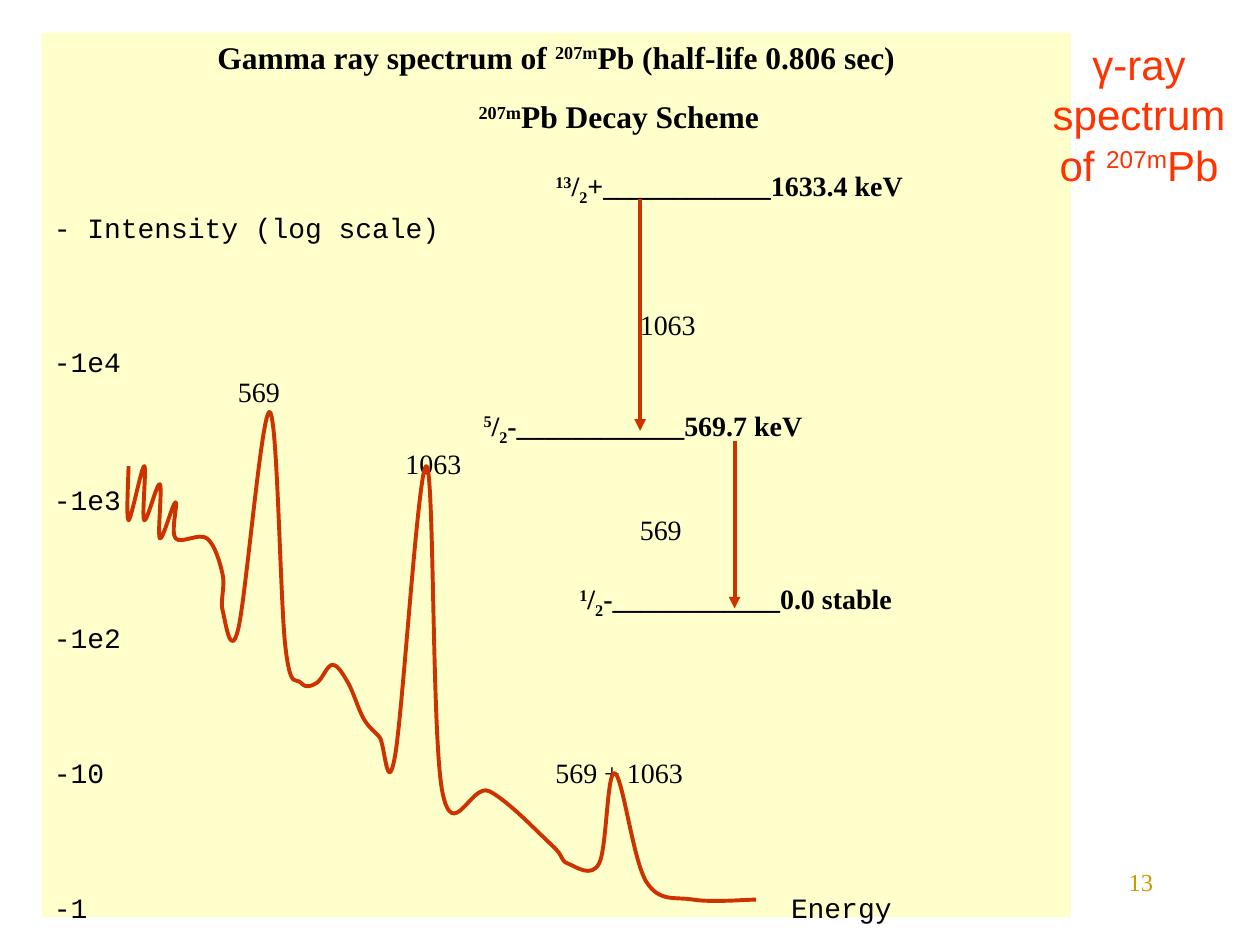
from dataclasses import dataclass

from lxml import etree
from pptx import Presentation, util as u
from pptx.dml.color import RGBColor
from pptx.enum import shapes, text
from pptx.oxml import ns


@dataclass
class Theme:
    panel: str = "FFFFCC"
    ink: str = "000000"
    curve: str = "CC3300"
    title: str = "FF3300"
    number: str = "CC9900"
    serif: str = "Times New Roman"
    mono: str = "Courier New"
    sans: str = "Arial"
    title_size: int = 24
    heading_size: int = 18
    body_size: int = 16
    number_size: int = 14
    line_width: float = 2.25


theme = Theme()
SUPER, SUB = 30000, -25000


def add_runs(paragraph, runs, font, size, color, bold=False):
    """Add (wording, baseline shift) pairs as runs of one style."""
    for wording, shift in runs:
        run = paragraph.add_run()
        run.text = wording
        run.font.name, run.font.size, run.font.bold = font, u.Pt(size), bold
        run.font.color.rgb = RGBColor.from_string(color)
        if shift:
            run.font._element.set("baseline", str(shift))


def style_line(shape):
    """Give a curve or connector the spectrum line and no shadow."""
    shape.line.color.rgb = RGBColor.from_string(theme.curve)
    shape.line.width = u.Pt(theme.line_width)
    properties = shape._element.spPr
    if properties.find(ns.qn("a:effectLst")) is None:
        etree.SubElement(properties, ns.qn("a:effectLst"))


presentation = Presentation()
presentation.slide_width, presentation.slide_height = u.Inches(10), u.Inches(7.5)
slide = presentation.slides.add_slide(presentation.slide_layouts[6])

# Page number
number_box = slide.shapes.add_textbox(u.Inches(7.17), u.Inches(6.83), u.Inches(2.08), u.Inches(0.5))
number_box.text_frame.word_wrap = True
paragraph = number_box.text_frame.paragraphs[0]
paragraph.alignment = text.PP_ALIGN.RIGHT
add_runs(paragraph, [("13", 0)], theme.serif, theme.number_size, theme.number)

# Panel
panel = slide.shapes.add_shape(shapes.MSO_SHAPE.RECTANGLE, u.Inches(0.33), u.Inches(0.26),
                               u.Inches(8.17), u.Inches(7.02))
panel.shadow.inherit = False
panel.fill.solid()
panel.fill.fore_color.rgb = RGBColor.from_string(theme.panel)
panel.line.fill.background()
frame = panel.text_frame
frame.word_wrap = True
frame.vertical_anchor = text.MSO_ANCHOR.TOP

# Panel lines: bottom edge in points, indent in inches, runs
heading, level, label, axis = "heading", "level", "label", "axis"
styles = {
    heading: (theme.serif, theme.heading_size, theme.ink, True),
    level: (theme.serif, theme.body_size, theme.ink, True),
    label: (theme.serif, theme.body_size, theme.ink),
    axis: (theme.mono, theme.body_size, theme.ink),
}
panel_lines = [
    (43, 0, [(heading, [("Gamma ray spectrum of ", 0), ("207m", SUPER), ("Pb (half-life 0.806 sec)", 0)])]),
    (77, 3.37, [(heading, [("207m", SUPER), ("Pb Decay Scheme", 0)])]),
    (118, 3.98, [(level, [("13", SUPER), ("/", 0), ("2", SUB), ("+____________1633.4 keV", 0)])]),
    (139, 0, [(axis, [("- Intensity (log scale)", 0)])]),
    (195, 4.65, [(label, [("1063", 0)])]),
    (216, 0, [(axis, [("-1e4", 0)])]),
    (233, 1.46, [(label, [("569", 0)])]),
    (255, 3.41, [(level, [("5", SUPER), ("/", 0), ("2", SUB), ("-____________569.7 keV", 0)])]),
    (274, 2.79, [(label, [("1063", 0)])]),
    (295, 0, [(axis, [("-1e3", 0)])]),
    (312, 4.65, [(label, [("569", 0)])]),
    (354, 4.17, [(level, [("1", SUPER), ("/", 0), ("2", SUB), ("-____________0.0 stable", 0)])]),
    (374, 0, [(axis, [("-1e2", 0)])]),
    (451, 3.98, [(axis, [("-10\t", 0)]), (label, [("569 + 1063", 0)])]),
    (528, 5.85, [(axis, [("-1\tEnergy", 0)])]),
]
line_height, previous_bottom = 16, None
for bottom, indent, parts in panel_lines:
    first = previous_bottom is None
    paragraph = frame.paragraphs[0] if first else frame.add_paragraph()
    paragraph.alignment = text.PP_ALIGN.CENTER if first else text.PP_ALIGN.LEFT
    paragraph.line_spacing = u.Pt(21 if first else line_height)
    paragraph.space_before = u.Pt(0 if first else bottom - previous_bottom - line_height)
    properties = paragraph._p.get_or_add_pPr()
    if "\t" in paragraph.text or any("\t" in run[0] for part in parts for run in part[1]):
        tabs = etree.SubElement(properties, ns.qn("a:tabLst"))
        etree.SubElement(tabs, ns.qn("a:tab"), pos=str(u.Inches(indent)), algn="l")
    else:
        properties.set("marL", str(u.Inches(indent)))
    for style, runs in parts:
        add_runs(paragraph, runs, *styles[style])
    previous_bottom = bottom

# Spectrum: knots as column and row of a grid, joined by a smooth spline
knots = [(0, 3), (0, 6), (1, 3), (1, 6), (2, 4), (2, 7), (3, 5), (3, 7), (5, 7), (6, 9), (6, 11),
         (7, 12), (9, 0), (10, 13), (11, 15), (12, 15), (13, 14), (14, 15), (15, 17), (16, 18),
         (17, 19), (19, 3), (20, 21), (23, 21), (27, 24), (28, 25), (30, 25), (31, 20), (33, 26),
         (36, 27), (40, 27)]
left, top, column, row = 1.02, 3.27, 4.98 / 40, 3.87 / 27
points = [(u.Inches(left + x * column), u.Inches(top + y * row)) for x, y in knots]
builder = slide.shapes.build_freeform(*points[0])
builder.add_line_segments(points[1:], close=False)
spectrum = builder.convert_to_shape()
spectrum.shadow.inherit = False
spectrum.fill.background()
style_line(spectrum)
local = [(x - spectrum.left, y - spectrum.top) for x, y in points]
padded = [local[0], *local, local[-1]]
outline = next(spectrum._element.iter(ns.qn("a:path")))
for index, segment in enumerate(outline.findall(ns.qn("a:lnTo"))):
    before, start, end, after = (padded + [local[-1]])[index:index + 4]
    curve = etree.Element(ns.qn("a:cubicBezTo"))
    controls = [[s + (e - b) / 6 for b, s, e in zip(before, start, end)],
                [e - (a - s) / 6 for s, e, a in zip(start, end, after)], end]
    for x, y in controls:
        etree.SubElement(curve, ns.qn("a:pt"), x=str(round(x)), y=str(round(y)))
    outline.replace(segment, curve)

# Decay arrows
for x, start, end in [(5.08, 1.58, 3.42), (5.83, 3.5, 4.83)]:
    arrow = slide.shapes.add_connector(shapes.MSO_CONNECTOR.STRAIGHT, u.Inches(x), u.Inches(start),
                                       u.Inches(x), u.Inches(end))
    style_line(arrow)
    etree.SubElement(arrow.line._get_or_add_ln(), ns.qn("a:tailEnd"), type="triangle")

# Title
title_box = slide.shapes.add_textbox(u.Inches(8.25), u.Inches(0.25), u.Inches(1.58), u.Inches(1.3))
title_box.text_frame.word_wrap = True
paragraph = title_box.text_frame.paragraphs[0]
paragraph.alignment = text.PP_ALIGN.CENTER
paragraph.line_spacing = u.Pt(29)
title_style = (theme.sans, theme.title_size, theme.title)
add_runs(paragraph, [("γ-ray", 0)], *title_style)
paragraph.add_line_break()
add_runs(paragraph, [("spectrum of ", 0), ("207m", SUPER), ("Pb", 0)], *title_style)

presentation.save("out.pptx")
